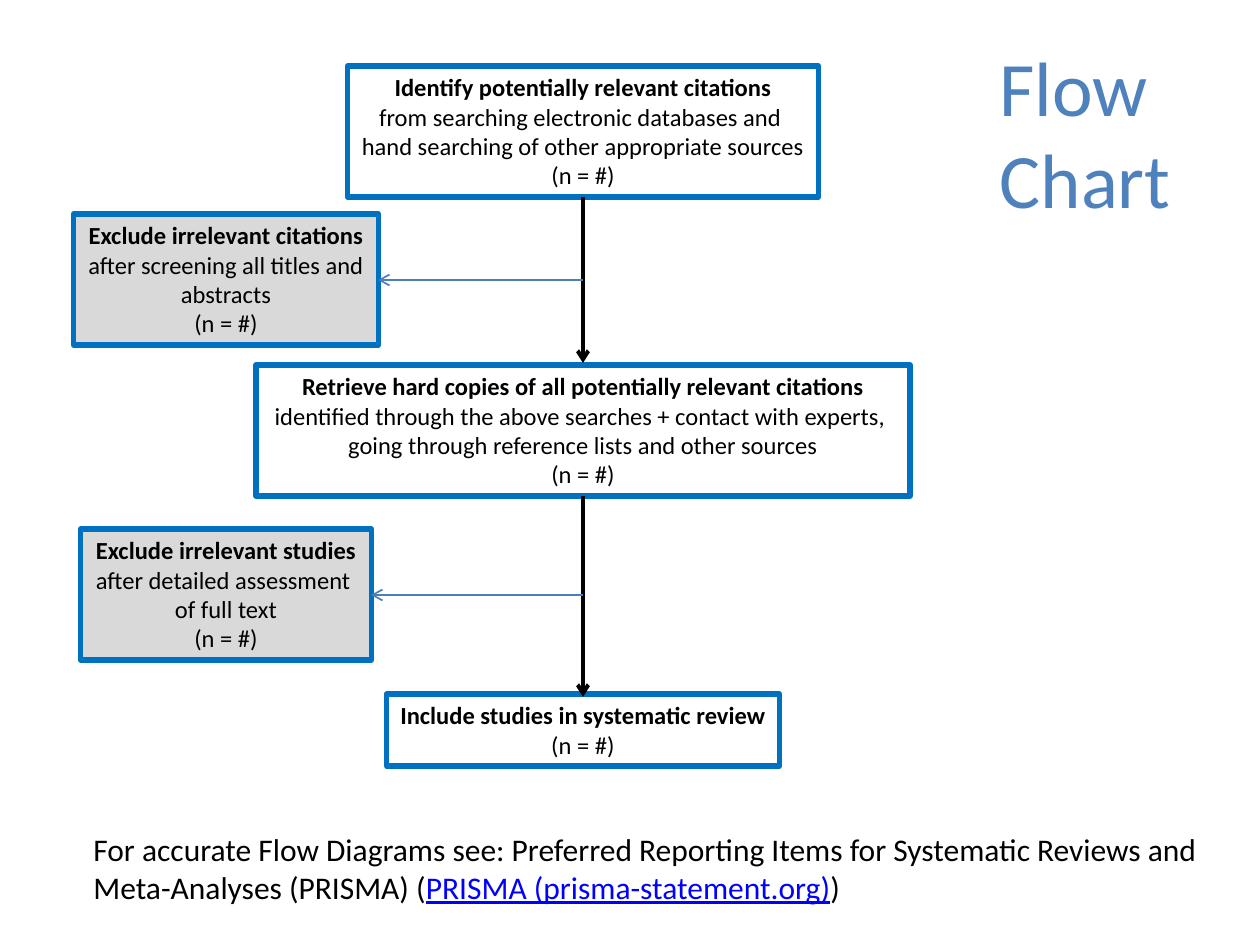
from dataclasses import dataclass

from lxml.etree import SubElement
from pptx import Presentation
from pptx.dml.color import RGBColor
from pptx.enum.shapes import MSO_CONNECTOR, MSO_SHAPE
from pptx.enum.text import MSO_ANCHOR, MSO_AUTO_SIZE, PP_ALIGN
from pptx.oxml.ns import qn
from pptx.util import Pt

EMU_PER_PX = 914400 / 126


def px(n):
    """Turn px into EMU."""
    return round(n * EMU_PER_PX)


@dataclass(frozen=True)
class Theme:
    """Colours, font and type sizes of the slide."""
    font: str = "Calibri"
    ink: str = "000000"
    title: str = "4F81BD"
    border: str = "0070C0"
    excluded: str = "D9D9D9"
    branch: str = "4B7EBC"
    link: str = "0000FF"
    title_size: int = 44
    note_size: int = 18
    box_size: int = 14


class FlowSlide:
    """Draws the elements of a flow chart on one slide."""

    def __init__(self, prs, theme):
        """Add a title-only slide."""
        self.theme = theme
        self.s = prs.slides.add_slide(prs.slide_layouts[5])

    def run(self, p, text, size, color, bold=False, underline=False):
        """Add one styled run to a paragraph."""
        r = p.add_run()
        r.text = text
        f = r.font
        f.name, f.size, f.bold, f.underline = self.theme.font, Pt(size), bold, underline
        f.color.rgb = RGBColor.from_string(color)

    def frame(self, sp, auto_size=MSO_AUTO_SIZE.SHAPE_TO_FIT_TEXT):
        """Prepare an unwrapped, top-anchored text frame."""
        tf = sp.text_frame
        tf.word_wrap = False
        tf.auto_size = auto_size
        tf.vertical_anchor = MSO_ANCHOR.TOP
        return tf

    def title(self, x, y, w, h, lines):
        """Place the title, one line per string."""
        sp = self.s.shapes.title
        sp.left, sp.top, sp.width, sp.height = map(px, (x, y, w, h))
        p = self.frame(sp, MSO_AUTO_SIZE.NONE).paragraphs[0]
        p.alignment = PP_ALIGN.LEFT
        for i, line in enumerate(lines):
            if i:
                p.add_line_break()
            self.run(p, line, self.theme.title_size, self.theme.title)

    def box(self, center, y, w, h, lines, fill=None):
        """Add a step box around a centre line, its first line bold."""
        sp = self.s.shapes.add_shape(
            MSO_SHAPE.RECTANGLE, px(center - w / 2), px(y), px(w), px(h))
        sp.shadow.inherit = False
        if fill:
            sp.fill.solid()
            sp.fill.fore_color.rgb = RGBColor.from_string(fill)
        else:
            sp.fill.background()
        sp.line.color.rgb = RGBColor.from_string(self.theme.border)
        sp.line.width = Pt(3)
        tf = self.frame(sp)
        for i, line in enumerate(lines):
            p = tf.add_paragraph() if i else tf.paragraphs[0]
            p.alignment = PP_ALIGN.CENTER
            self.run(p, line, self.theme.box_size, self.theme.ink, bold=i == 0)

    def arrow(self, x1, y1, x2, y2, color, width):
        """Add a straight arrow."""
        c = self.s.shapes.add_connector(
            MSO_CONNECTOR.STRAIGHT, px(x1), px(y1), px(x2), px(y2))
        c.line.color.rgb = RGBColor.from_string(color)
        c.line.width = Pt(width)
        SubElement(c.line._get_or_add_ln(), qn("a:tailEnd"), type="arrow")
        SubElement(c._element.spPr, qn("a:effectLst"))

    def note(self, x, y, w, h, before, link, after):
        """Add the reference note with its link text."""
        sp = self.s.shapes.add_textbox(px(x), px(y), px(w), px(h))
        p = self.frame(sp).paragraphs[0]
        size, ink = self.theme.note_size, self.theme.ink
        for i, line in enumerate(before):
            if i:
                p.add_line_break()
            self.run(p, line, size, ink)
        self.run(p, link, size, self.theme.link, underline=True)
        self.run(p, after, size, ink)


def main():
    """Build the flow chart slide."""
    prs = Presentation()
    prs.slide_width, prs.slide_height = px(1260), px(945)
    theme = Theme()
    flow = FlowSlide(prs, theme)
    spine, side = 583, 226
    count = "(n = #)"

    flow.title(987, 33, 198, 199, ["Flow ", "Chart"])
    steps = [
        (66, 471, 131, ["Identify potentially relevant citations",
                        "from searching electronic databases and ",
                        "hand searching of other appropriate sources"]),
        (365, 654, 131, ["Retrieve hard copies of all potentially relevant citations",
                         "identified through the above searches + contact with experts, ",
                         "going through reference lists and other sources"]),
        (694, 393, 72, ["Include studies in systematic review"]),
    ]
    exclusions = [
        (214, 305, 131, ["Exclude irrelevant citations",
                         "after screening all titles and", "abstracts"]),
        (529, 291, 131, ["Exclude irrelevant studies",
                         "after detailed assessment ", "of full text"]),
    ]
    for y, w, h, lines in steps:
        flow.box(spine, y, w, h, lines + [count])
    for y, w, h, lines in exclusions:
        flow.box(side, y, w, h, lines + [count], theme.excluded)

    for (y, _, h, _), end in zip(steps, (363, 697)):
        flow.arrow(spine, y + h, spine, end, theme.ink, 2.25)
    for y, w, h, _ in exclusions:
        middle = y + h // 2 + 1
        flow.arrow(spine, middle, side + w // 2, middle, theme.branch, 1)

    flow.note(81, 824, 1149, 89,
              ["For accurate Flow Diagrams see: Preferred Reporting Items "
               "for Systematic Reviews and ",
               "Meta-Analyses (PRISMA) ("],
              "PRISMA (prisma-statement.org)", ")")
    prs.save("out.pptx")


if __name__ == "__main__":
    main()
